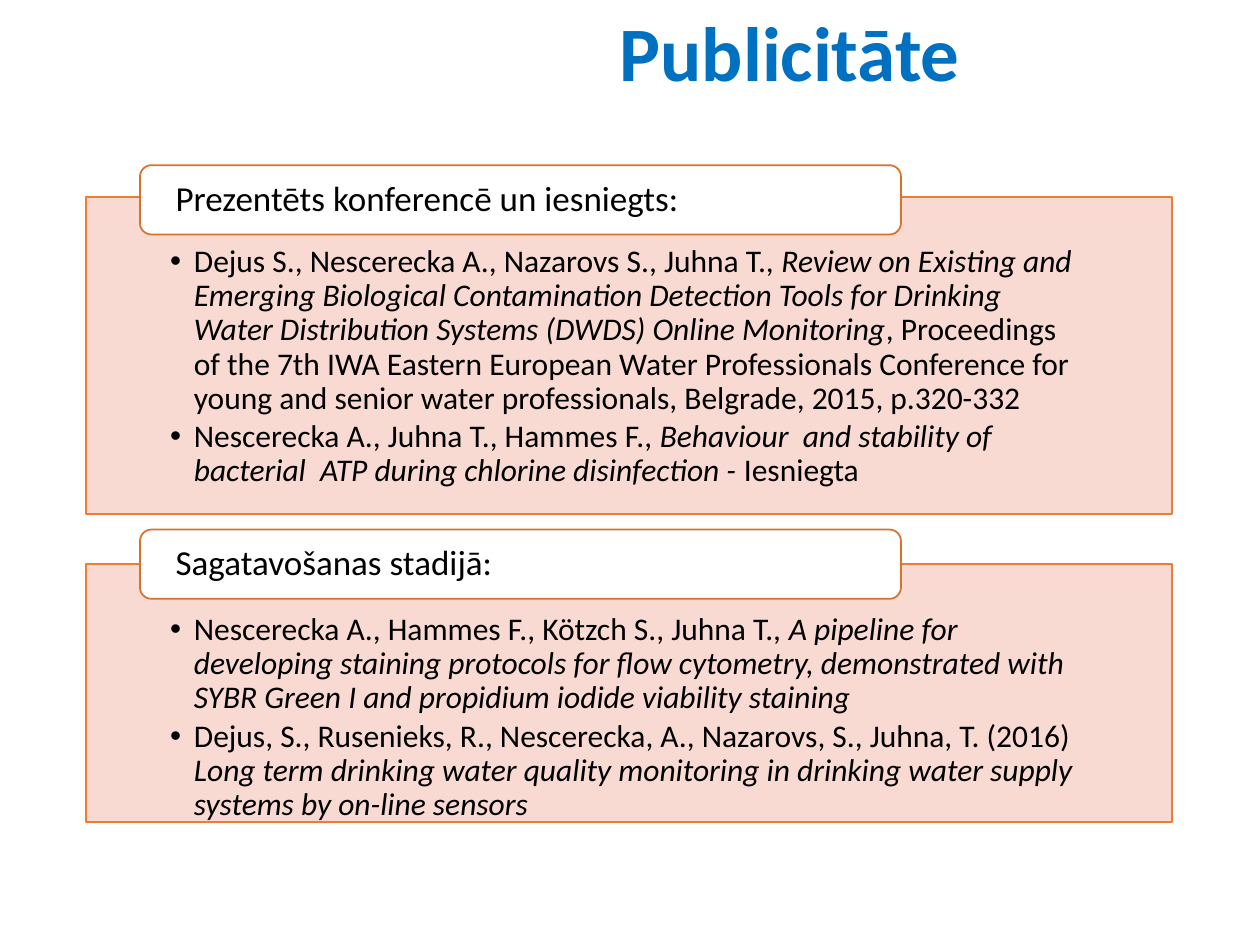
"""Build the publicity slide: a title and two captioned panels of references."""
from dataclasses import dataclass

from lxml import etree
from pptx import Presentation
from pptx import util as u
from pptx.dml.color import RGBColor
from pptx.enum import shapes, text
from pptx.oxml.ns import qn

COLORS = {
    "title": "0070C0",
    "panel": "F8D7CE",
    "panel_line": "ED7D31",
    "caption": "FFFFFF",
    "caption_line": "D7712C",
    "text": "000000",
}
FONT = "Calibri"
PANEL_LEFT, PANEL_WIDTH = 49, 620.6
CAPTION_LEFT, CAPTION_WIDTH, CAPTION_HEIGHT = 80, 434.9, 39.6
BULLET_INDENT = 13.6


@dataclass(frozen=True)
class Part:
    words: str
    italic: bool = False


@dataclass(frozen=True)
class Panel:
    caption: str
    caption_top: float
    top: float
    height: float
    references: tuple[tuple[Part, ...], ...]


PANELS = (
    Panel("Prezentēts konferencē un iesniegts:", 94.4, 112.4, 181.4, (
        (
            Part("Dejus S., Nescerecka A., Nazarovs S., Juhna T., "),
            Part("Review on Existing and Emerging Biological Contamination Detection "
                 "Tools for Drinking Water Distribution Systems (DWDS) Online Monitoring", True),
            Part(", Proceedings of the 7th IWA Eastern European Water Professionals "
                 "Conference for young and senior water professionals, Belgrade, 2015, p.320-332"),
        ),
        (
            Part("Nescerecka A., Juhna T., Hammes F., "),
            Part("Behaviour  and stability of bacterial  ATP during chlorine disinfection - ", True),
            Part("Iesniegta"),
        ),
    )),
    Panel("Sagatavošanas stadijā:", 302.6, 322.4, 147.4, (
        (
            Part("Nescerecka A., Hammes F., Kötzch S., Juhna T., "),
            Part("A pipeline for developing staining protocols for flow cytometry, "
                 "demonstrated with SYBR Green I and propidium iodide viability staining", True),
        ),
        (
            Part("Dejus, S., Rusenieks, R., Nescerecka, A., Nazarovs, S., Juhna, T. (2016) "),
            Part("Long term drinking water quality monitoring in drinking water supply "
                 "systems by on-line sensors", True),
        ),
    )),
)


def rgb(name: str) -> RGBColor:
    """Look up a named colour."""
    return RGBColor.from_string(COLORS[name])


def style_run(r, size: float, color: str = "text", bold: bool = False, italic: bool = False) -> None:
    """Set the font of a run."""
    r.font.name, r.font.size = FONT, u.Pt(size)
    r.font.bold, r.font.italic = bold, italic
    r.font.color.rgb = rgb(color)


def add_box(s, kind, bounds: tuple, color: str, margins: tuple, anchor):
    """Add an outlined shape with a left-aligned wrapping text frame."""
    sp = s.shapes.add_shape(kind, *map(u.Pt, bounds))
    sp.shadow.inherit = False
    sp.fill.solid()
    sp.fill.fore_color.rgb = rgb(color)
    sp.line.color.rgb = rgb(f"{color}_line")
    sp.line.width = u.Pt(1)
    tf = sp.text_frame
    tf.word_wrap, tf.vertical_anchor = True, anchor
    tf.margin_left, tf.margin_top, tf.margin_right, tf.margin_bottom = map(u.Pt, margins)
    return sp


def add_bullet(p) -> None:
    """Give a paragraph a hanging round bullet."""
    pPr = p._p.get_or_add_pPr()
    pPr.set("marL", str(u.Pt(BULLET_INDENT)))
    pPr.set("indent", str(-u.Pt(BULLET_INDENT)))
    etree.SubElement(pPr, qn("a:buFont"), typeface="Arial")
    etree.SubElement(pPr, qn("a:buChar"), char="•")


def add_panel(s, panel: Panel) -> None:
    """Draw a panel of references and the caption over its top edge."""
    sp = add_box(s, shapes.MSO_SHAPE.RECTANGLE,
                 (PANEL_LEFT, panel.top, PANEL_WIDTH, panel.height),
                 "panel", (48.2, 28, 48.2, 9.4), text.MSO_ANCHOR.TOP)
    fill = sp._element.spPr.find(qn("a:solidFill"))
    etree.SubElement(fill[0], qn("a:alpha"), val="90000")
    tf = sp.text_frame
    for i, reference in enumerate(panel.references):
        p = tf.add_paragraph() if i else tf.paragraphs[0]
        add_bullet(p)
        p.level, p.alignment = 1, text.PP_ALIGN.LEFT
        p.line_spacing, p.space_after = 0.9, u.Pt(2.7)
        for part in reference:
            r = p.add_run()
            r.text = part.words
            style_run(r, 18, italic=part.italic)

    sp = add_box(s, shapes.MSO_SHAPE.ROUNDED_RECTANGLE,
                 (CAPTION_LEFT, panel.caption_top, CAPTION_WIDTH, CAPTION_HEIGHT),
                 "caption", (18.4, 0, 18.4, 0), text.MSO_ANCHOR.MIDDLE)
    p = sp.text_frame.paragraphs[0]
    p.text = panel.caption
    p.alignment, p.line_spacing = text.PP_ALIGN.LEFT, 0.9
    style_run(p.runs[0], 20)


def add_title(s, words: str) -> None:
    """Add the slide title."""
    tf = s.shapes.add_textbox(u.Pt(182.9), u.Pt(5), u.Pt(537.1), u.Pt(63.4)).text_frame
    tf.word_wrap = True
    tf.text = words
    p = tf.paragraphs[0]
    p.alignment, p.line_spacing = text.PP_ALIGN.CENTER, 0.9
    style_run(p.runs[0], 44, "title", bold=True)


def main() -> None:
    """Build and save the presentation."""
    prs = Presentation()
    prs.slide_width, prs.slide_height = u.Pt(720), u.Pt(540)
    s = prs.slides.add_slide(prs.slide_layouts[6])
    add_title(s, "Publicitāte")
    for panel in PANELS:
        add_panel(s, panel)
    prs.save("out.pptx")


if __name__ == "__main__":
    main()
